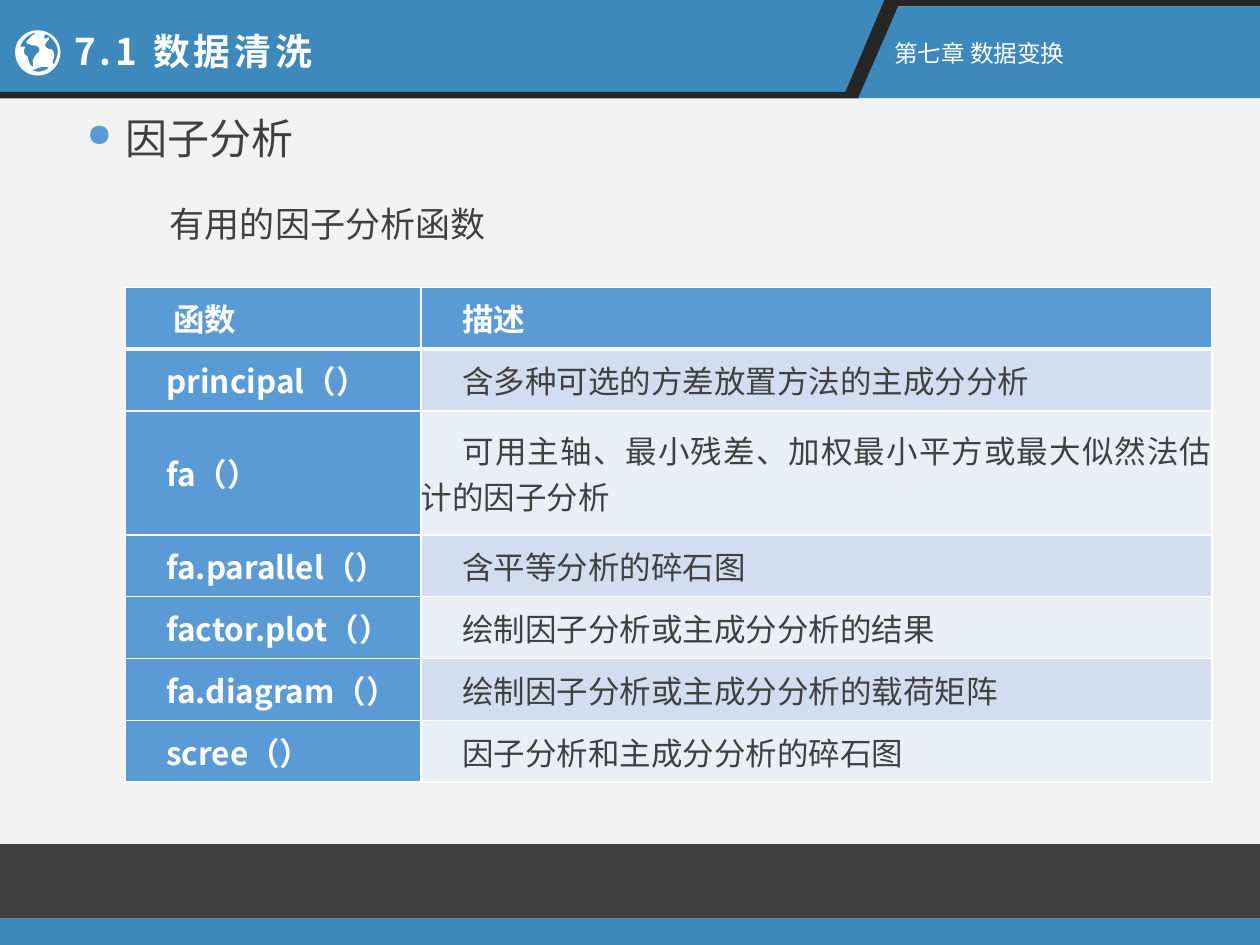
from dataclasses import dataclass

from lxml.etree import SubElement
from pptx import Presentation
from pptx.dml.color import RGBColor
from pptx.enum.shapes import MSO_SHAPE
from pptx.enum.text import MSO_ANCHOR, PP_ALIGN
from pptx.oxml.ns import qn
from pptx.util import Inches, Pt


@dataclass(frozen=True)
class Theme:
    """Colours, font and type sizes of the slide."""
    font: str = "Noto Sans CJK SC"
    page: str = "F2F2F2"
    white: str = "FFFFFF"
    dark: str = "404040"
    black: str = "262626"
    band: str = "3D89BC"
    accent: str = "5B9BD5"
    stripes: tuple = ("D2DEEF", "EAEFF7")
    heading: float = 24
    title: float = 21
    lead: float = 20
    cell: float = 18
    chapter: float = 13.5


T = Theme()

GLOBE = [
    [(.3, .24), (.2, .24, .12, .32, .12, .41), (.12, .52, .2, .6, .3, .6),
     (.4, .6, .48, .52, .48, .41), (.48, .32, .4, .24, .3, .24)],
    [(.46, .41), (.46, .45, .44, .48, .43, .51), (.42, .51, .41, .49, .42, .48),
     (.43, .47, .43, .44, .43, .43), (.43, .42, .42, .39, .4, .39),
     (.39, .39, .38, .39, .36, .37), (.35, .33, .4, .32, .39, .3),
     (.38, .29, .35, .33, .35, .29), (.35, .28, .35, .28, .36, .27),
     (.41, .29, .46, .35, .46, .41)],
    [(.28, .26), (.28, .27, .27, .28, .26, .28), (.25, .29, .24, .29, .24, .3),
     (.23, .31, .21, .33, .21, .33), (.21, .34, .22, .36, .23, .35),
     (.23, .35, .24, .35, .25, .36), (.27, .36, .33, .36, .31, .41),
     (.3, .43, .28, .43, .27, .46), (.27, .46, .26, .48, .26, .48),
     (.26, .49, .27, .53, .26, .53), (.25, .53, .23, .5, .23, .49),
     (.23, .48, .22, .47, .22, .45), (.22, .44, .19, .44, .19, .41),
     (.19, .39, .2, .38, .2, .37), (.2, .37, .17, .37, .16, .37),
     (.18, .31, .23, .27, .28, .26)],
    [(.25, .56), (.27, .56, .27, .55, .28, .55), (.28, .55, .29, .55, .3, .54),
     (.31, .54, .33, .53, .35, .53), (.36, .53, .38, .53, .39, .54),
     (.36, .56, .33, .57, .3, .57), (.28, .57, .27, .56, .25, .56)],
]

ROWS = [
    ("\u00a0函数", "描述"),
    ("principal（）", "含多种可选的方差放置方法的主成分分析"),
    ("fa（）", "可用主轴、最小残差、加权最小平方或最大似然法估计的因子分析"),
    ("fa.parallel（）", "含平等分析的碎石图"),
    ("factor.plot（）", "绘制因子分析或主成分分析的结果"),
    ("fa.diagram（）", "绘制因子分析或主成分分析的载荷矩阵"),
    ("scree（）", "因子分析和主成分分析的碎石图"),
]


def paint(sp, color):
    """Give a shape a flat fill with no line or shadow."""
    sp.shadow.inherit = False
    sp.fill.solid()
    sp.fill.fore_color.rgb = RGBColor.from_string(color)
    sp.line.fill.background()


def outline(s, contours, color):
    """Draw closed contours, given in inches, as one filled freeform."""
    ends = [[tuple(map(Inches, pt[-2:])) for pt in c] for c in contours]
    fb = s.shapes.build_freeform(*ends[0][0])
    for i, points in enumerate(ends):
        if i:
            fb.move_to(*points[0])
        fb.add_line_segments(points[1:], close=True)
    sp = fb.convert_to_shape()
    paint(sp, color)
    return sp


def add_globe(s):
    """Draw the white globe with curved edges."""
    sp = outline(s, GLOBE, T.white)
    curves = [curve for contour in GLOBE for curve in contour[1:]]
    for seg, curve in zip(list(sp._element.iter(qn("a:lnTo"))), curves):
        seg.tag = qn("a:cubicBezTo")
        seg.remove(seg[0])
        for x, y in zip(curve[::2], curve[1::2]):
            SubElement(seg, qn("a:pt"), x=str(Inches(x) - sp.left), y=str(Inches(y) - sp.top))


def add_run(p, text, size, color, bold=False):
    """Append a formatted run to a paragraph."""
    r = p.add_run()
    r.text = text
    r.font.size, r.font.bold, r.font.name = Pt(size), bold, T.font
    r.font.color.rgb = RGBColor.from_string(color)
    rPr = r.font._element
    SubElement(rPr, qn("a:ea")).set("typeface", T.font)
    return rPr


def add_text(s, box, text, size, color, bold=False, wrap=True):
    """Place one line of text in a box and return paragraph and run properties."""
    tf = s.shapes.add_textbox(*map(Inches, box)).text_frame
    tf.word_wrap = wrap
    tf.vertical_anchor = MSO_ANCHOR.MIDDLE
    p = tf.paragraphs[0]
    rPr = add_run(p, text, size, color, bold)
    return p._p.get_or_add_pPr(), rPr


def add_header(s, w, h):
    """Draw the slanted header with its globe, title and chapter name."""
    edge = h - 0.05
    outline(s, [[(0, 0), (7.05, 0), (6.74, edge), (0, edge)]], T.band)
    outline(s, [[(7.02, 0), (w, 0), (w, 0.05), (7.13, 0.05), (6.82, h),
                 (0, h), (0, edge), (6.71, edge)]], T.black)
    outline(s, [[(7.13, 0.05), (w, 0.05), (w, h), (6.81, h)]], T.band)
    _, rPr = add_text(s, (0.49, 0.18, 2.17, 0.45), "7.1 数据清洗",
                      T.title, T.white, bold=True, wrap=False)
    rPr.set("spc", "220")
    add_globe(s)
    add_text(s, (7, 0.26, 1.58, 0.33), "第七章 数据变换", T.chapter, T.white, wrap=False)


def add_footer(s, w, top, bottom):
    """Draw the dark and blue footer bands."""
    split = 7.29
    for y, end, color in ((top, split, T.dark), (split, bottom, T.band)):
        sp = s.shapes.add_shape(MSO_SHAPE.RECTANGLE, 0, Inches(y), Inches(w), Inches(end - y))
        paint(sp, color)


def add_intro(s, x, y):
    """Write the bulleted heading and the lead line below it."""
    pPr, _ = add_text(s, (x, y, 6.22, 0.5), "因子分析", T.heading, T.dark)
    pPr.set("marL", str(Inches(0.31)))
    pPr.set("indent", str(-Inches(0.31)))
    color = SubElement(pPr, qn("a:buClr"))
    SubElement(color, qn("a:srgbClr")).set("val", T.accent)
    SubElement(pPr, qn("a:buSzPct")).set("val", "75000")
    SubElement(pPr, qn("a:buChar")).set("char", "●")
    add_text(s, (x + 0.66, y + 0.71, 7.69, 0.44), "有用的因子分析函数", T.lead, T.dark)


def add_borders(cell, widths):
    """Draw white cell borders before the fill, given widths by side."""
    tcPr = cell._tc.get_or_add_tcPr()
    for i, (side, width) in enumerate(widths.items()):
        ln = SubElement(tcPr, qn(f"a:ln{side}"), w=str(Pt(width)))
        fill = SubElement(ln, qn("a:solidFill"))
        SubElement(fill, qn("a:srgbClr")).set("val", T.white)
        tcPr.insert(i, ln)


def add_function_table(s, x, y, w, h):
    """Build the table of functions and descriptions."""
    unit = h / (len(ROWS) + 1)
    table = s.shapes.add_table(len(ROWS), 2, *map(Inches, (x, y, w, h))).table
    table.columns[0].width, table.columns[1].width = Inches(2.35), Inches(w - 2.35)
    for i, row in enumerate(ROWS):
        table.rows[i].height = Inches(unit * (2 if i == 2 else 1))
        for j, text in enumerate(row):
            strong = i == 0 or j == 0
            cell = table.cell(i, j)
            cell.margin_left = cell.margin_right = cell.margin_top = cell.margin_bottom = 0
            cell.vertical_anchor = MSO_ANCHOR.MIDDLE
            cell.fill.solid()
            fill = T.accent if strong else T.stripes[(i - 1) % 2]
            cell.fill.fore_color.rgb = RGBColor.from_string(fill)
            add_borders(cell, {"L": 1, "R": 1, "T": 3 if i == 1 else 1, "B": 3 if i == 0 else 1})
            p = cell.text_frame.paragraphs[0]
            p.alignment = PP_ALIGN.JUSTIFY
            p._p.get_or_add_pPr().set("indent", str(Inches(0.33)))
            add_run(p, text, T.cell, T.white if strong else T.dark, strong)


def main():
    """Build the slide and save it."""
    prs = Presentation()
    prs.slide_width, prs.slide_height = Inches(10), Inches(7.5)
    s = prs.slides.add_slide(prs.slide_layouts[6])
    s.background.fill.solid()
    s.background.fill.fore_color.rgb = RGBColor.from_string(T.page)
    add_footer(s, 10, 6.7, 7.5)
    add_intro(s, 0.59, 0.84)
    add_header(s, 10, 0.78)
    add_function_table(s, 0.99, 2.28, 8.63, 3.93)
    prs.save("out.pptx")


if __name__ == "__main__":
    main()
